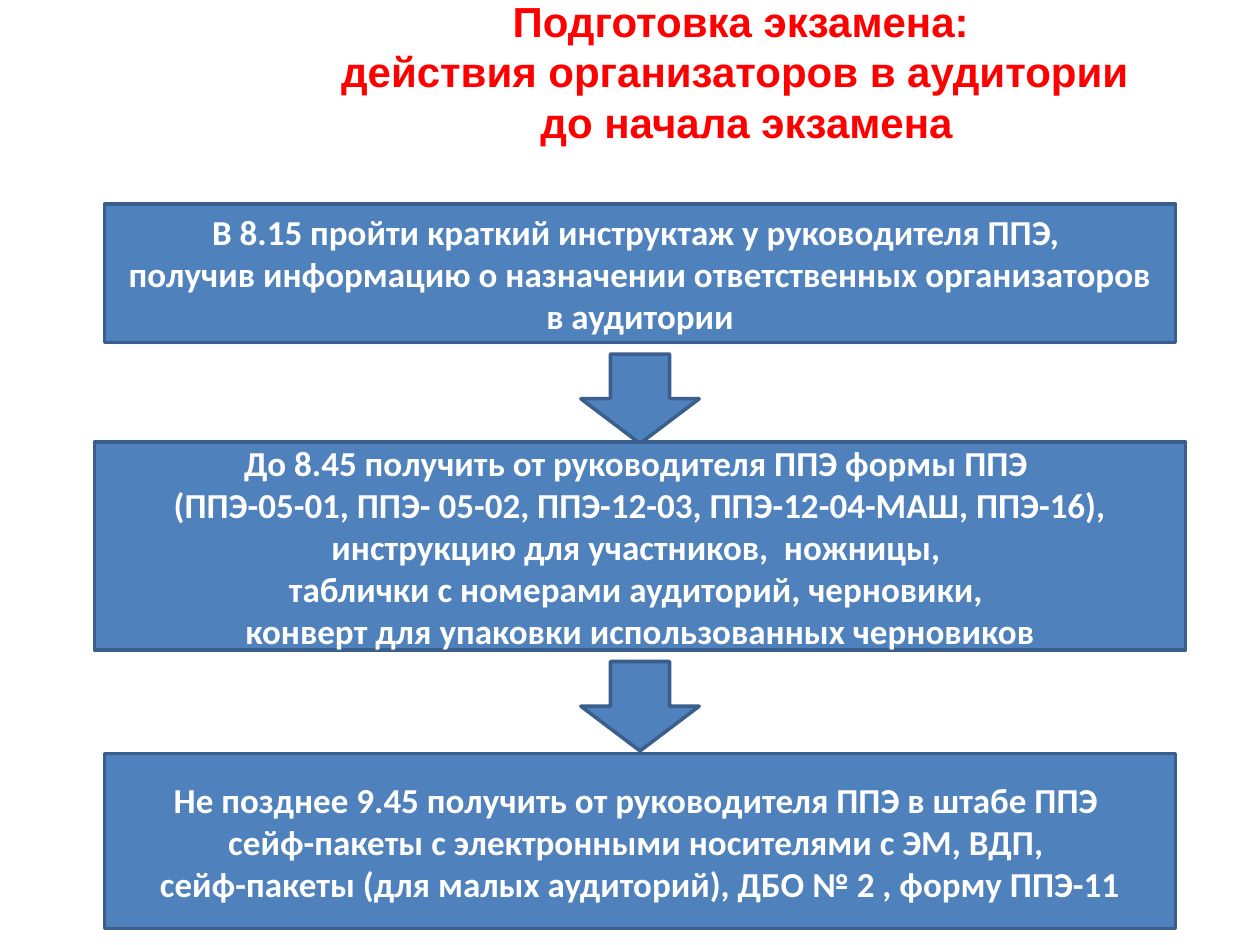
from pptx import Presentation
from pptx.dml.color import RGBColor
from pptx.enum.shapes import MSO_SHAPE
from pptx.enum.text import MSO_ANCHOR, PP_ALIGN
from pptx.util import Inches, Pt

SLIDE_WIDTH = 10
FLOW_CENTER = 5.08


def color(hex_value):
    return RGBColor.from_string(hex_value)


class FlowSlide:
    FILL, OUTLINE, LIGHT, ACCENT = "4F81BD", "3A5F8C", "FFFFFF", "FF0000"

    def __init__(self, slide):
        self.slide = slide

    def set_text(self, frame, text, font_name, size, text_color):
        frame.word_wrap = True
        frame.vertical_anchor = MSO_ANCHOR.MIDDLE
        paragraph = frame.paragraphs[0]
        paragraph.text = text
        paragraph.alignment = PP_ALIGN.CENTER
        for run in paragraph.runs:
            run.font.name = font_name
            run.font.size = Pt(size)
            run.font.bold = True
            run.font.color.rgb = color(text_color)

    def title(self, text, left, top, width, height):
        heading = self.slide.shapes.add_textbox(
            Inches(left), Inches(top), Inches(width), Inches(height))
        self.set_text(heading.text_frame, text, "Arial", 24, self.ACCENT)

    def block(self, preset, top, width, height):
        block = self.slide.shapes.add_shape(
            preset, Inches(FLOW_CENTER - width / 2), Inches(top),
            Inches(width), Inches(height))
        block.shadow.inherit = False
        block.fill.solid()
        block.fill.fore_color.rgb = color(self.FILL)
        block.line.color.rgb = color(self.OUTLINE)
        block.line.width = Pt(2)
        return block

    def step(self, text, top, width, height):
        step = self.block(MSO_SHAPE.RECTANGLE, top, width, height)
        self.set_text(step.text_frame, text, "Calibri", 20, self.LIGHT)

    def arrow(self, top):
        self.block(MSO_SHAPE.DOWN_ARROW, top, 0.94, 0.71)


# Steps: text, top, width, height
STEPS = [
    ("В 8.15 пройти краткий инструктаж у руководителя ППЭ, \n"
     "получив информацию о назначении ответственных организаторов в аудитории",
     1.62, 8.5, 1.1),
    ("До 8.45 получить от руководителя ППЭ формы ППЭ \n"
     "(ППЭ-05-01, ППЭ- 05-02, ППЭ-12-03, ППЭ-12-04-МАШ, ППЭ-16), "
     "инструкцию для участников,  ножницы, \n"
     "таблички с номерами аудиторий, черновики, \n"
     "конверт для упаковки использованных черновиков",
     3.51, 8.66, 1.65),
    ("Не позднее 9.45 получить от руководителя ППЭ в штабе ППЭ \n"
     "сейф-пакеты с электронными носителями с ЭМ, ВДП, \n"
     "сейф-пакеты (для малых аудиторий), ДБО № 2 , форму ППЭ-11",
     5.98, 8.5, 1.39),
]
ARROW_GAP = 0.09


def main():
    presentation = Presentation()
    presentation.slide_width = Inches(SLIDE_WIDTH)
    presentation.slide_height = Inches(7.5)
    flow = FlowSlide(presentation.slides.add_slide(presentation.slide_layouts[6]))

    # Title
    flow.title("Подготовка экзамена: \n"
               "действия организаторов в аудитории  \n"
               "до начала экзамена", 1.89, -0.02, 8.07, 1.17)

    # Steps, each followed by an arrow except the last
    for index, (text, top, width, height) in enumerate(STEPS):
        flow.step(text, top, width, height)
        if index < len(STEPS) - 1:
            flow.arrow(top + height + ARROW_GAP)

    presentation.save("out.pptx")


if __name__ == "__main__":
    main()
